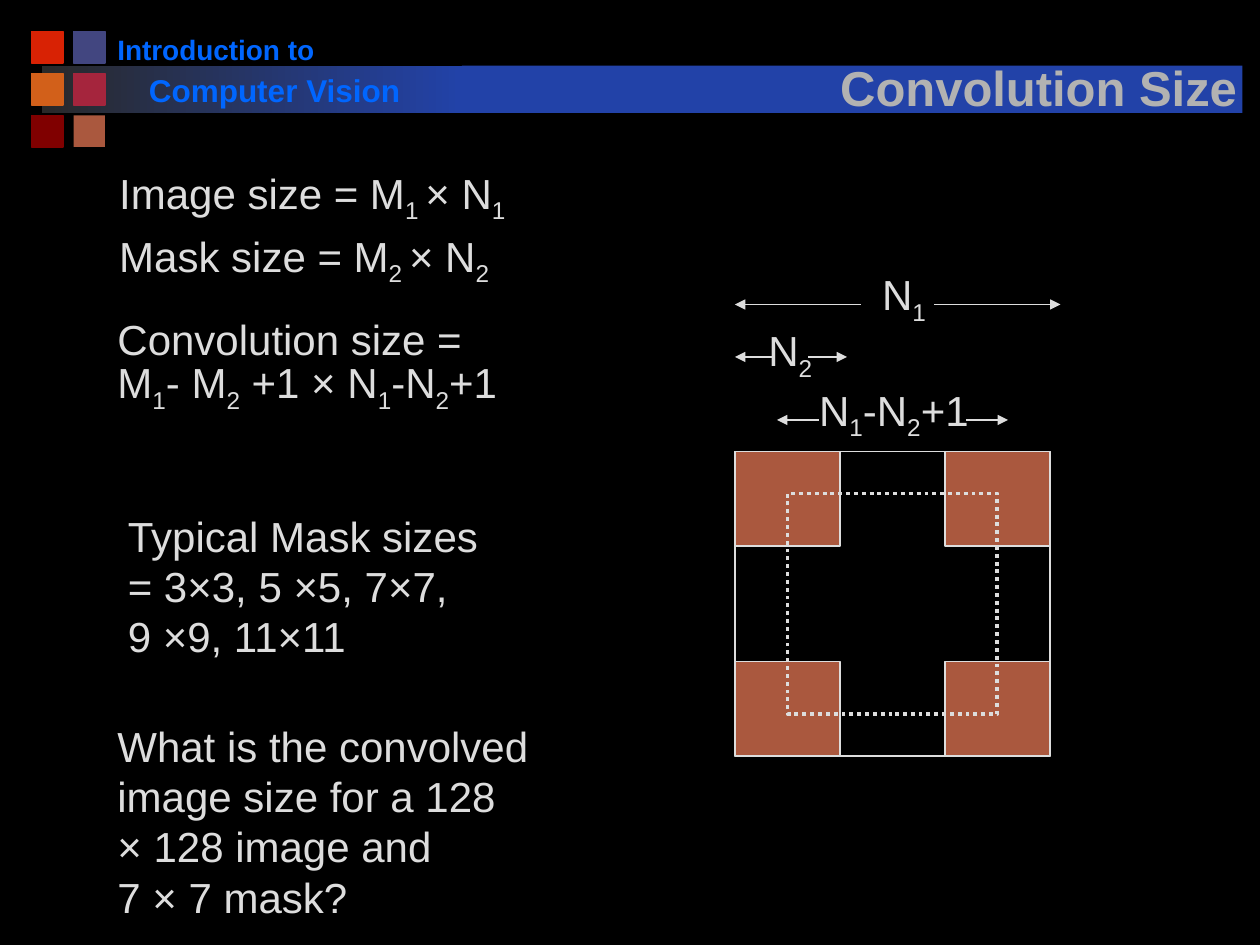
import pptx
import pptx.dml.color
import pptx.enum.dml
import pptx.enum.shapes
import pptx.enum.text
import pptx.oxml
import pptx.oxml.ns
import pptx.util

Pt = pptx.util.Pt
RGBColor = pptx.dml.color.RGBColor

BLACK = RGBColor(0x00, 0x00, 0x00)
CHARCOAL = RGBColor(0x29, 0x29, 0x29)
NAVY = RGBColor(0x22, 0x42, 0xA8)
BLUE = RGBColor(0x00, 0x66, 0xFF)
RUST = RGBColor(0xAA, 0x58, 0x3E)
LIGHT = RGBColor(0xDD, 0xDD, 0xDD)
SILVER = RGBColor(0xB2, 0xB2, 0xB2)
RED = RGBColor(0xD8, 0x22, 0x04)
INDIGO = RGBColor(0x42, 0x46, 0x80)
ORANGE = RGBColor(0xD2, 0x60, 0x1A)
CRIMSON = RGBColor(0xA5, 0x25, 0x3D)
MAROON = RGBColor(0x80, 0x00, 0x00)

LOGO_COLORS = [[RED, INDIGO], [ORANGE, CRIMSON], [MAROON, RUST]]
LOGO_SIZE, LOGO_PITCH, LOGO_START = 18, 24, 18

BAR_TOP, BAR_HEIGHT = 37.5, 27

# Underscores switch subscript on and off.
HEADER = [
    (["Introduction to"], (60, 15, 128, 27), dict(size=16, wrap=False)),
    (["Computer Vision"], (78, 37, 182, 29), dict(size=18)),
]
BODY = [
    (["Image size = M_1 _× N_1_"], (61, 96, 237, 36), False),
    (["Mask size = M_2 _× N_2_"], (61, 132, 228, 36), False),
    (["Convolution size =", "M_1_- M_2_ +1 × N_1_-N_2_+1"], (60, 175.5, 292, 65), True),
    (["N_1_"], (497, 154, 41, 36), False),
    (["N_2_"], (432, 186, 48, 36), True),
    (["N_1_-N_2_+1"], (461, 220, 102, 36), False),
    (["Typical Mask sizes", "= 3×3, 5 ×5, 7×7,", "9 ×9, 11×11"], (66, 288, 216, 94), False),
    (["What is the convolved", "image size for a 128", "× 128 image and", "7 × 7 mask?"],
     (60, 408, 256, 122), False),
]
IMAGE_BOX = (420, 258, 180, 174)
MASK_SIZE = (60, 54)
RESULT_BOX = (450, 282, 120, 126)
ARROWS = [
    (492, 420, 174), (534, 606, 174),
    (441, 420, 204), (462, 484, 204),
    (468, 444, 240), (552, 576, 240),
]


def add_text(slide, lines, box, size=24, color=LIGHT, bold=False, wrap=True,
             align=pptx.enum.text.PP_ALIGN.LEFT, anchor=pptx.enum.text.MSO_ANCHOR.TOP,
             grow=True, shadow=False):
    frame = slide.shapes.add_textbox(*map(Pt, box)).text_frame
    frame.word_wrap = wrap
    frame.vertical_anchor = anchor
    if grow:
        frame.auto_size = pptx.enum.text.MSO_AUTO_SIZE.SHAPE_TO_FIT_TEXT
    for index, line in enumerate(lines):
        paragraph = frame.add_paragraph() if index else frame.paragraphs[0]
        paragraph.alignment = align
        paragraph.line_spacing = Pt(size * 1.2)
        for position, part in enumerate(line.split("_")):
            if not part:
                continue
            run = paragraph.add_run()
            run.text = part
            font = run.font
            font.name, font.size, font.bold = "Arial", Pt(size), bold
            font.color.rgb = color
            properties = run._r.get_or_add_rPr()
            if position % 2:
                properties.set("baseline", "-25000")
            if shadow:
                fill = properties.find(pptx.oxml.ns.qn("a:solidFill"))
                fill.addnext(pptx.oxml.parse_xml(
                    f'<a:effectLst {pptx.oxml.ns.nsdecls("a")}>'
                    '<a:outerShdw dist="35921" dir="2700000" algn="ctr">'
                    '<a:srgbClr val="000000"/></a:outerShdw></a:effectLst>'))


def add_box(slide, box, fill=None, line=None, width=0.75):
    shape = slide.shapes.add_shape(pptx.enum.shapes.MSO_SHAPE.RECTANGLE, *map(Pt, box))
    shape.shadow.inherit = False
    if fill is None:
        shape.fill.background()
    else:
        shape.fill.solid()
        shape.fill.fore_color.rgb = fill
    if line is None:
        shape.line.fill.background()
    else:
        shape.line.color.rgb = line
        shape.line.width = Pt(width)
    return shape


def add_arrow(slide, start, end, height):
    connector = slide.shapes.add_connector(
        pptx.enum.shapes.MSO_CONNECTOR.STRAIGHT, Pt(start), Pt(height), Pt(end), Pt(height))
    connector.line.color.rgb = LIGHT
    connector.line.width = Pt(0.75)
    namespace = pptx.oxml.ns.nsdecls("a")
    connector.line._get_or_add_ln().append(
        pptx.oxml.parse_xml(f'<a:tailEnd {namespace} type="triangle"/>'))
    connector._element.spPr.append(pptx.oxml.parse_xml(f"<a:effectLst {namespace}/>"))


def add_header(slide):
    gradient_bar = add_box(slide, (24, BAR_TOP, 240, BAR_HEIGHT), NAVY)
    gradient_bar.fill.gradient()
    gradient_bar.fill.gradient_angle = 0
    for stop, color in zip(gradient_bar.fill.gradient_stops, (CHARCOAL, NAVY)):
        stop.color.rgb = color
    for row, colors in enumerate(LOGO_COLORS):
        for column, color in enumerate(colors):
            add_box(slide, (LOGO_START + column * LOGO_PITCH, LOGO_START + row * LOGO_PITCH,
                            LOGO_SIZE, LOGO_SIZE),
                    color, None if color == RUST else color, 1)
    add_box(slide, (264, BAR_TOP, 446, BAR_HEIGHT), NAVY)
    for lines, box, options in HEADER:
        add_text(slide, lines, box, color=BLUE, bold=True, **options)
    add_text(slide, ["Convolution Size"], (467, 22, 253, 48), size=28, color=SILVER, bold=True,
             align=pptx.enum.text.PP_ALIGN.CENTER, anchor=pptx.enum.text.MSO_ANCHOR.BOTTOM,
             grow=False, shadow=True)


def add_diagram(slide):
    left, top, width, height = IMAGE_BOX
    mask_width, mask_height = MASK_SIZE
    add_box(slide, IMAGE_BOX, line=LIGHT)
    for mask_left in (left, left + width - mask_width):
        for mask_top in (top, top + height - mask_height):
            add_box(slide, (mask_left, mask_top, mask_width, mask_height), RUST, LIGHT)
    result = add_box(slide, RESULT_BOX, line=LIGHT, width=2.25)
    result.line.dash_style = pptx.enum.dml.MSO_LINE.ROUND_DOT
    for start, end, arrow_height in ARROWS:
        add_arrow(slide, start, end, arrow_height)


def main():
    presentation = pptx.Presentation()
    presentation.slide_width, presentation.slide_height = Pt(720), Pt(540)
    slide = presentation.slides.add_slide(presentation.slide_layouts[6])
    slide.background.fill.solid()
    slide.background.fill.fore_color.rgb = BLACK
    add_header(slide)
    add_diagram(slide)
    for lines, box, wrap in BODY:
        add_text(slide, lines, box, wrap=wrap)
    presentation.save("out.pptx")


if __name__ == "__main__":
    main()
